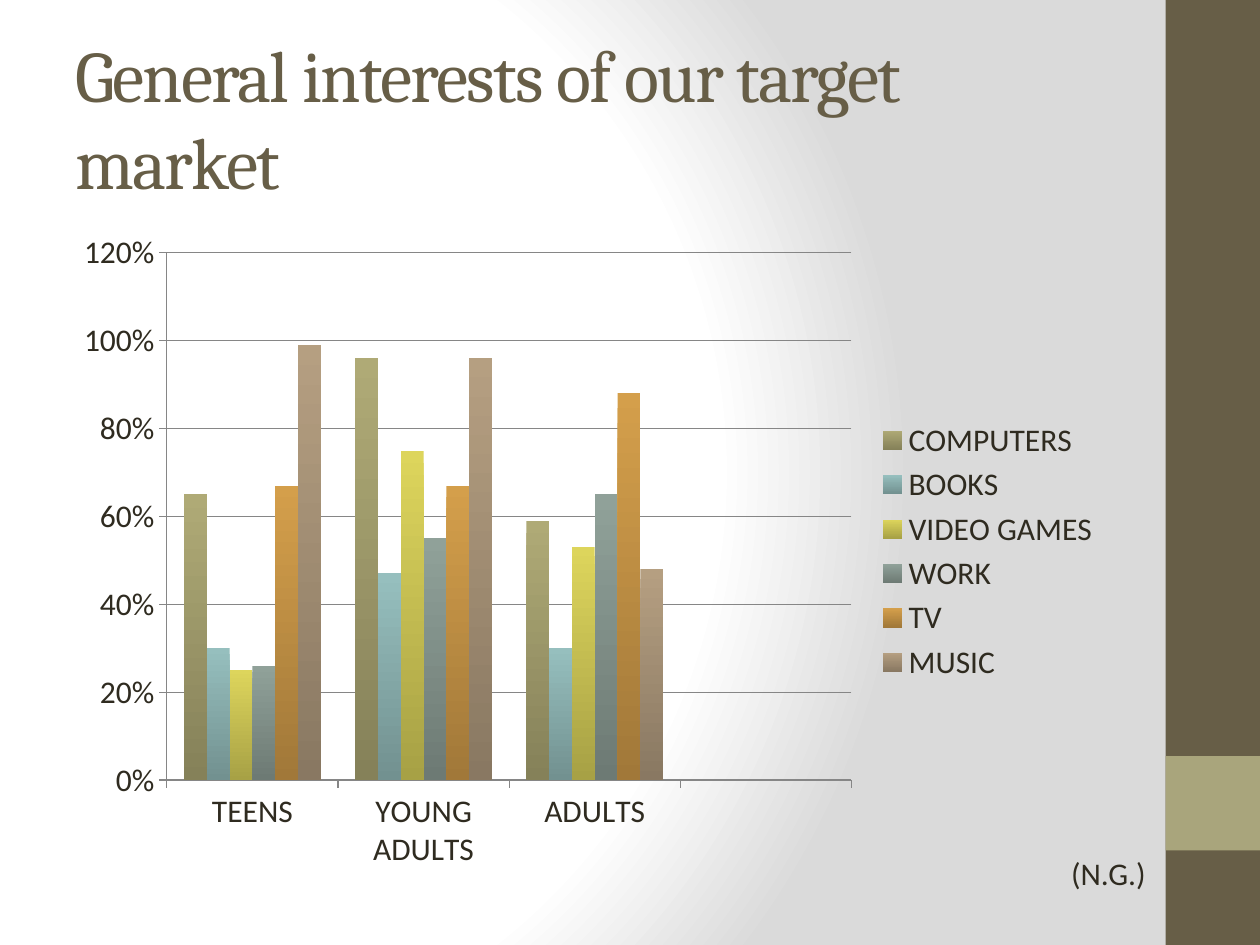
from lxml import etree
from pptx import Presentation
from pptx.chart.data import CategoryChartData
from pptx.dml.color import RGBColor
from pptx.enum.chart import XL_CHART_TYPE, XL_LEGEND_POSITION, XL_TICK_MARK
from pptx.enum.shapes import MSO_SHAPE
from pptx.enum.text import MSO_ANCHOR, MSO_AUTO_SIZE
from pptx.oxml import parse_xml
from pptx.util import Pt

BARS = XL_CHART_TYPE.COLUMN_CLUSTERED
RIGHT = XL_LEGEND_POSITION.RIGHT
OUT = XL_TICK_MARK.OUTSIDE
RECT = MSO_SHAPE.RECTANGLE
MIDDLE = MSO_ANCHOR.MIDDLE
GROW = MSO_AUTO_SIZE.SHAPE_TO_FIT_TEXT
NS = "http://schemas.openxmlformats.org/drawingml/2006/main"

COLORS = {"white": "FFFFFF", "mist": "DADADA", "brown": "675E47",
          "olive": "A9A57C", "ink": "2F2B20", "line": "868686"}
GROUPS = ["TEENS", "YOUNG ADULTS", "ADULTS", ""]
SERIES = [
    ("COMPUTERS", "AFAA76", (0.65, 0.96, 0.59, None)),
    ("BOOKS", "96BFBE", (0.3, 0.47, 0.3, None)),
    ("VIDEO GAMES", "DDD55C", (0.25, 0.75, 0.53, None)),
    ("WORK", "90A199", (0.26, 0.55, 0.65, None)),
    ("TV", "D49F4B", (0.67, 0.67, 0.88, None)),
    ("MUSIC", "B59F81", (0.99, 0.96, 0.48, None)),
]


def tint(name):
    """Return a named colour."""
    return RGBColor.from_string(COLORS[name])


def shade(code, part=0.76):
    """Return a hex colour darkened to the given part."""
    return RGBColor(*(int(v * part) for v in RGBColor.from_string(code)))


def add_back(slide):
    """Fill the background with a round gradient."""
    fill = slide.background.fill
    fill.gradient()
    stops = "".join(
        f'<a:gs pos="{pos * 1000}"><a:srgbClr val="{COLORS[name]}"/></a:gs>'
        for pos, name in ((0, "white"), (75, "white"), (100, "mist")))
    grad = parse_xml(
        f'<a:gradFill xmlns:a="{NS}" rotWithShape="1"><a:gsLst>{stops}</a:gsLst>'
        '<a:path path="circle"><a:fillToRect l="20000" t="50000" '
        'r="100000" b="50000"/></a:path></a:gradFill>')
    old = next(slide.background._cSld.iter(f"{{{NS}}}gradFill"))
    old.getparent().replace(old, grad)


def add_band(slide, x, y, w, h):
    """Draw the side band with its square accent."""
    for top, tall, name in ((y, h, "brown"), (y + 0.8 * h, w, "olive")):
        bar = slide.shapes.add_shape(RECT, Pt(x), Pt(top), Pt(w), Pt(tall))
        bar.shadow.inherit = False
        bar.fill.solid()
        bar.fill.fore_color.rgb = tint(name)
        bar.line.fill.background()


def add_text(slide, x, y, w, h, words, face, size, name, wrap=True):
    """Place one run of text and return its frame and run."""
    frame = slide.shapes.add_textbox(Pt(x), Pt(y), Pt(w), Pt(h)).text_frame
    frame.word_wrap = wrap
    run = frame.paragraphs[0].add_run()
    run.text = words
    run.font.name = face
    run.font.size = Pt(size)
    run.font.color.rgb = tint(name)
    return frame, run


def add_title(slide, x, y, w, h):
    """Place the title in slightly tight letters."""
    frame, run = add_text(slide, x, y, w, h,
                          "General interests of our target market",
                          "Cambria", 41.4, "brown")
    frame.vertical_anchor = MIDDLE
    run.font._element.set("spc", "-100")


def add_note(slide, x, y, w, h):
    """Place the initials at the lower right."""
    frame, _ = add_text(slide, x, y, w, h, "(N.G.)", "Calibri", 18, "ink", False)
    frame.auto_size = GROW


def style_axis(axis):
    """Set the ticks and line of an axis."""
    axis.major_tick_mark = OUT
    axis.format.line.color.rgb = tint("line")
    axis.format.line.width = Pt(0.75)


def add_bars(slide, x, y, w, h):
    """Chart the interests of each age group."""
    data = CategoryChartData(number_format="0.00%")
    data.categories = GROUPS
    for name, _, vals in SERIES:
        data.add_series(name, vals)
    chart = slide.shapes.add_chart(BARS, Pt(x), Pt(y), Pt(w), Pt(h), data).chart
    chart.has_title = False
    chart.font.name = "Calibri"
    chart.font.size = Pt(18)
    chart.font.color.rgb = tint("ink")
    chart.has_legend = True
    chart.legend.position = RIGHT
    chart.legend.include_in_layout = False
    plot = chart.plots[0]
    plot.gap_width = 150
    plot.overlap = 0
    plot.vary_by_categories = False
    for series, (_, code, _) in zip(plot.series, SERIES):
        fill = series.format.fill
        fill.gradient()
        fill.gradient_angle = 270
        first, last = fill.gradient_stops
        first.color.rgb = RGBColor.from_string(code)
        first.position = 0
        last.color.rgb = shade(code)
        last.position = 1
    axis = chart.value_axis
    axis.minimum_scale = 0
    axis.maximum_scale = 1.2
    axis.major_unit = 0.2
    axis.tick_labels.number_format = "0%"
    axis.tick_labels.number_format_is_linked = False
    axis.has_major_gridlines = True
    axis.major_gridlines.format.line.color.rgb = tint("line")
    axis.major_gridlines.format.line.width = Pt(0.75)
    style_axis(axis)
    style_axis(chart.category_axis)


def main():
    """Build and save the slide."""
    deck = Presentation()
    deck.slide_width, deck.slide_height = Pt(720), Pt(540)
    slide = deck.slides.add_slide(deck.slide_layouts[6])
    add_back(slide)
    add_band(slide, 666, 0, 54, 540)
    add_title(slide, 36, 21.6, 600, 90)
    add_bars(slide, 36, 126, 600, 378)
    add_note(slide, 605, 484.5, 62, 29)
    deck.save("out.pptx")


if __name__ == "__main__":
    main()
